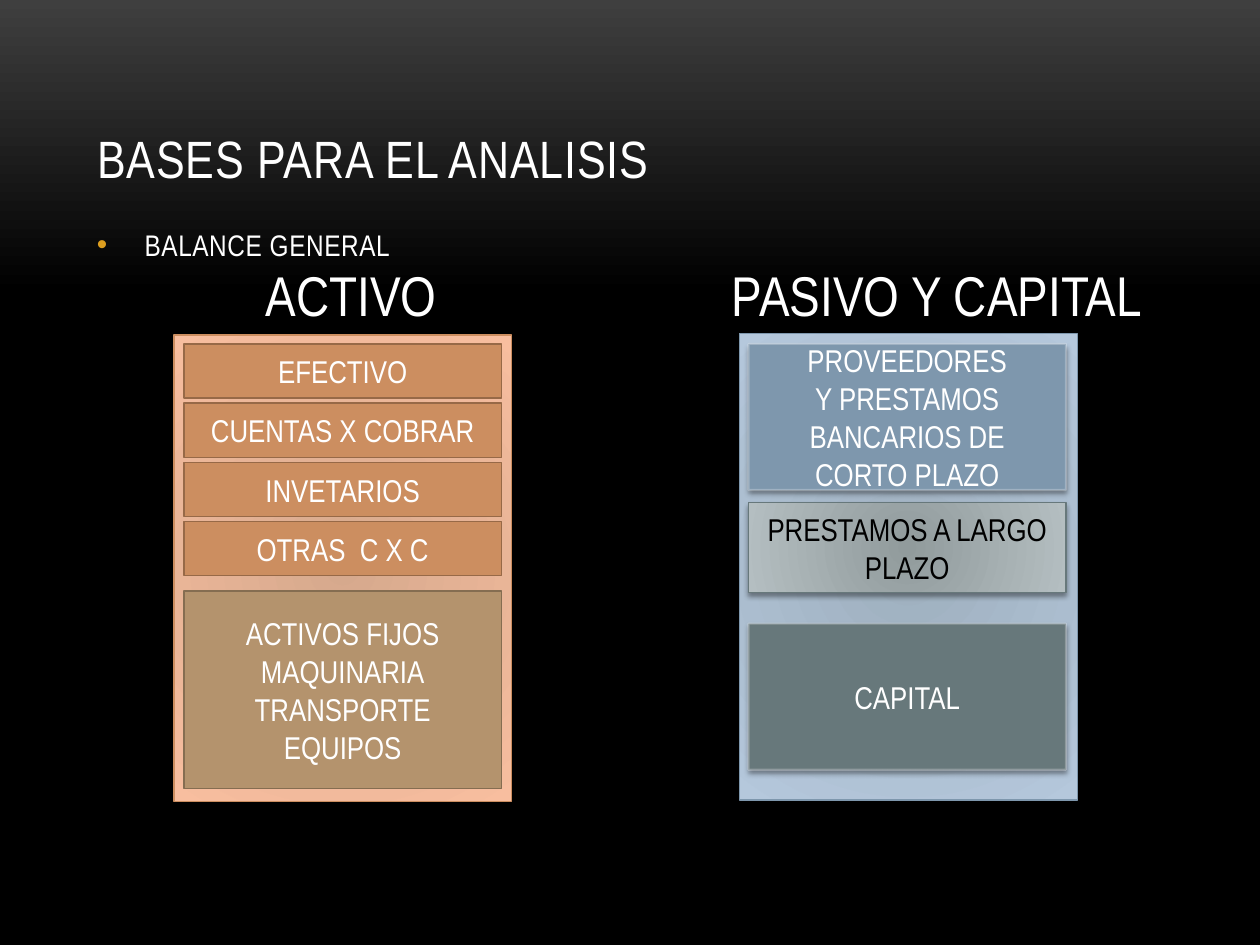
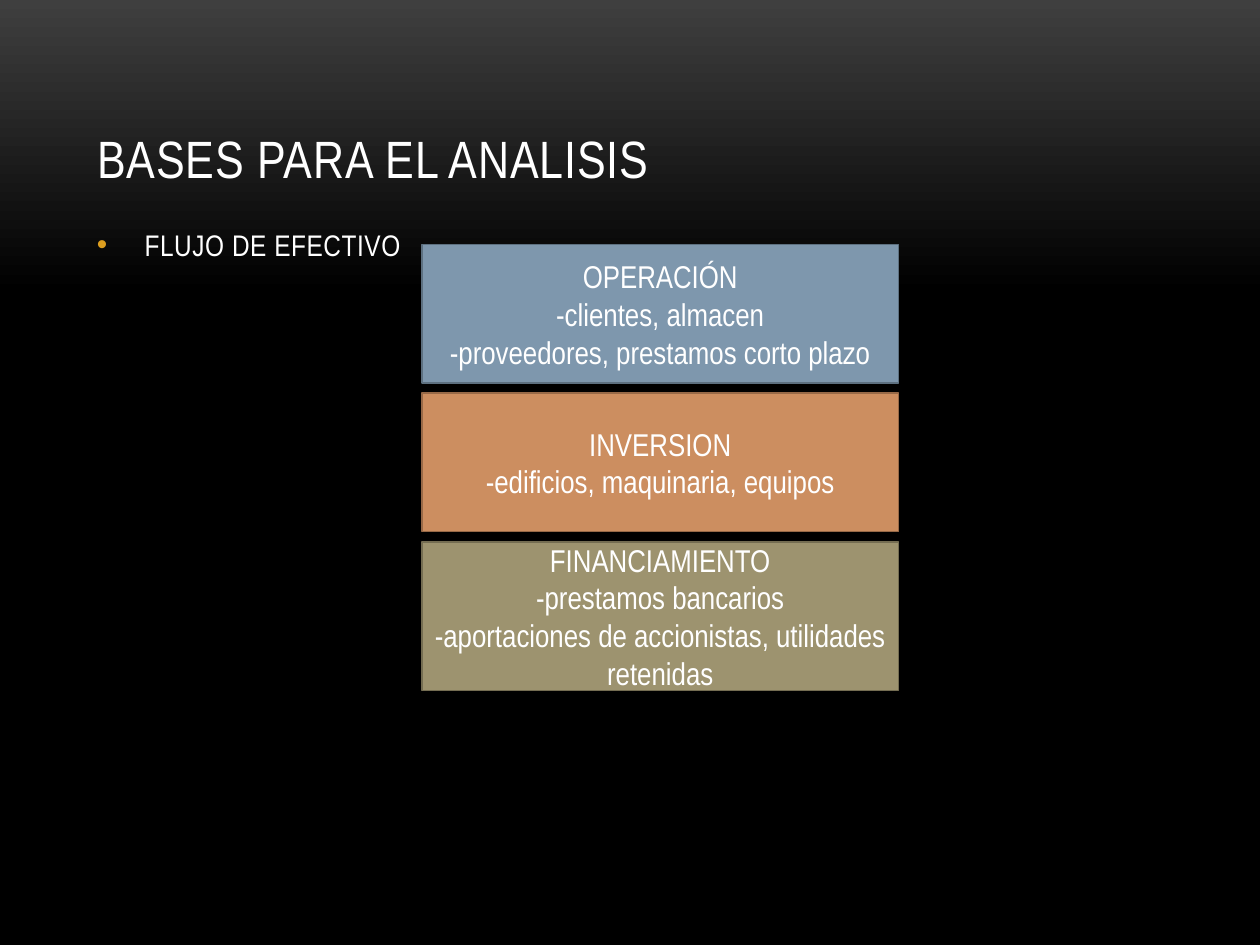
"""Build two slides on the bases for financial analysis."""
from lxml import etree
from pptx import Presentation
from pptx.dml.color import RGBColor
from pptx.enum.shapes import MSO_SHAPE
from pptx.enum.text import MSO_ANCHOR, PP_ALIGN
from pptx.oxml.ns import qn
from pptx.util import Inches, Pt

RECT = MSO_SHAPE.RECTANGLE
TOP, MID, LOW = MSO_ANCHOR.TOP, MSO_ANCHOR.MIDDLE, MSO_ANCHOR.BOTTOM
LEFT, CENTER = PP_ALIGN.LEFT, PP_ALIGN.CENTER

FACE = "Arial Narrow"
WHITE = RGBColor(0xFF, 0xFF, 0xFF)
BLACK = RGBColor(0x00, 0x00, 0x00)
GRAY = RGBColor(0x3F, 0x3F, 0x3F)
GOLD = RGBColor(0xDC, 0x9E, 0x1F)
ORANGE = RGBColor(0xCC, 0x8E, 0x60)
RUST = RGBColor(0x97, 0x69, 0x47)
TAN = RGBColor(0xB4, 0x93, 0x6D)
BROWN = RGBColor(0x85, 0x6D, 0x51)
BLUE = RGBColor(0x7E, 0x97, 0xAD)
NAVY = RGBColor(0x5D, 0x70, 0x80)
SLATE = RGBColor(0x67, 0x78, 0x7B)
OLIVE = RGBColor(0x9D, 0x93, 0x6F)
MOSS = RGBColor(0x74, 0x6D, 0x52)
PEACH = [RGBColor(0xD6, 0xA9, 0x8D), RGBColor(0xF8, 0xBE, 0x9F)]
SKY = [RGBColor(0x9E, 0xAF, 0xBE), RGBColor(0xB5, 0xC8, 0xDC)]
MIST = [RGBColor(0x91, 0x9B, 0x9C), RGBColor(0xB4, 0xBE, 0xC1)]

TITLE = "BASES PARA EL ANALISIS"
TOPICS = ["BALANCE GENERAL", "FLUJO DE EFECTIVO"]
HEADS = [("ACTIVO", 2.01, 1.57), ("PASIVO Y CAPITAL", 5.71, 3.49)]
PANELS = [(1.38, 2.66, PEACH, ORANGE), (5.87, 2.65, SKY, BLUE)]
CURRENT = ["EFECTIVO", "CUENTAS X COBRAR", "INVETARIOS", "OTRAS  C X C"]
FIXED = "ACTIVOS FIJOS\nMAQUINARIA\nTRANSPORTE\nEQUIPOS"
EDGE = {"line": WHITE, "width": 1.2, "alpha": 25}
DEBTS = [
    ("PROVEEDORES\nY PRESTAMOS BANCARIOS DE CORTO PLAZO", 2.73, 1.16, BLUE, WHITE, EDGE),
    ("PRESTAMOS A LARGO PLAZO", 3.99, 0.71, MIST, BLACK, {"line": SLATE, "width": 0.75}),
    ("CAPITAL", 4.95, 1.16, SLATE, WHITE, EDGE),
]
FLOWS = [
    ("OPERACIÓN\n-clientes, almacen\n-proveedores, prestamos corto plazo", 1.1, BLUE, NAVY),
    ("INVERSION\n-edificios, maquinaria, equipos", 1.1, ORANGE, RUST),
    ("FINANCIAMIENTO\n-prestamos bancarios\n"
     "-aportaciones de accionistas, utilidades retenidas", 1.18, OLIVE, MOSS),
]


def add(parent, tag, **attrs):
    """Append a drawing element and return it."""
    node = etree.SubElement(parent, qn(tag))
    for key, value in attrs.items():
        node.set(key, str(value))
    return node


def write(shape, text, size=18, color=WHITE, align=CENTER, anchor=MID,
          wrap=True, space=0):
    """Fill a shape with text, one paragraph per line."""
    frame = shape.text_frame
    frame.word_wrap = wrap
    frame.vertical_anchor = anchor
    frame.text = text
    for para in frame.paragraphs:
        para.alignment = align
        for run in para.runs:
            font = run.font
            font.name, font.size, font.color.rgb = FACE, Pt(size), color
            if space:
                font._element.set("spc", str(space))
    return frame


def blend(fill, colors, last=1):
    """Set a gradient of two colours, ending at the given share."""
    fill.gradient()
    for stop, color, place in zip(fill.gradient_stops, colors, (0, last)):
        stop.color.rgb = color
        stop.position = place


def box(slide, area, color, line, width=0.85, alpha=None, shade=False):
    """Draw a plain or radial rectangle, with a shadow if asked."""
    shape = slide.shapes.add_shape(RECT, *map(Inches, area))
    props = shape._element.spPr
    if isinstance(color, list):
        blend(shape.fill, color)
        grad = props.find(qn("a:gradFill"))
        grad.remove(grad.find(qn("a:lin")))
        way = add(grad, "a:path", path="circle")
        add(way, "a:fillToRect", l=100000, t=100000, r=100000, b=100000)
    else:
        shape.fill.solid()
        shape.fill.fore_color.rgb = color
    shape.line.color.rgb = line
    shape.line.width = Pt(width)
    if alpha:
        tint = props.find(qn("a:ln")).find(".//" + qn("a:srgbClr"))
        add(tint, "a:alpha", val=alpha * 1000)
    shape.shadow.inherit = False
    if shade:
        glow = add(props.find(qn("a:effectLst")), "a:outerShdw", blurRad=Pt(3),
                   dist=Pt(2), dir=5400000, rotWithShape=0)
        tint = add(glow, "a:srgbClr", val=BLACK)
        add(tint, "a:alpha", val=40000)
    return shape


def label(slide, area, text, **style):
    """Place a text box and return its frame."""
    return write(slide.shapes.add_textbox(*map(Inches, area)), text, **style)


def start(deck, topic):
    """Add a slide with the shared title and a bulleted topic."""
    slide = deck.slides.add_slide(deck.slide_layouts[5])
    title = slide.shapes.title
    title.left, title.top, title.width, title.height = map(Inches, (0.67, 0.3, 8.67, 1.25))
    write(title, TITLE, size=30, align=LEFT, anchor=LOW, space=50)
    frame = label(slide, (0.67, 1.75, 8.67, 4.5), topic, size=17, align=LEFT,
                  anchor=TOP, space=30)
    para = frame.paragraphs[0]
    props = para._p.get_or_add_pPr()
    props.set("marL", str(Inches(0.38)))
    props.set("indent", str(-Inches(0.38)))
    add(add(props, "a:buClr"), "a:srgbClr", val=GOLD)
    add(props, "a:buFont", typeface="Arial")
    add(props, "a:buChar", char="•")
    para.space_after = Pt(6)
    return slide


def balance(deck):
    """Draw the assets beside the debts and equity."""
    slide = start(deck, TOPICS[0])
    for left, top, color, line in PANELS:
        box(slide, (left, top, 2.68, 3.7), color, line, width=0.75, shade=True)
    for text, left, width in HEADS:
        label(slide, (left, 2.02, width, 0.64), text, size=32, align=LEFT,
              anchor=TOP, wrap=False)
    for i, text in enumerate(CURRENT):
        write(box(slide, (1.46, 2.73 + 0.47 * i, 2.52, 0.43), ORANGE, RUST), text)
    write(box(slide, (1.46, 4.69, 2.52, 1.57), TAN, BROWN), FIXED)
    for text, top, height, color, ink, edge in DEBTS:
        shape = box(slide, (5.94, top, 2.52, height), color, shade=True, **edge)
        write(shape, text, color=ink)


def flow(deck):
    """Stack the three kinds of cash flow."""
    slide = start(deck, TOPICS[1])
    top = 1.94
    for text, height, color, line in FLOWS:
        write(box(slide, (3.35, top, 3.78, height), color, line), text)
        top += height + 0.08


def main():
    """Build and save the deck."""
    deck = Presentation()
    deck.slide_width, deck.slide_height = Inches(10), Inches(7.5)
    fill = deck.slide_master.background.fill
    blend(fill, [GRAY, BLACK], last=0.31)
    fill.gradient_angle = 270
    balance(deck)
    flow(deck)
    deck.save("out.pptx")


if __name__ == "__main__":
    main()
